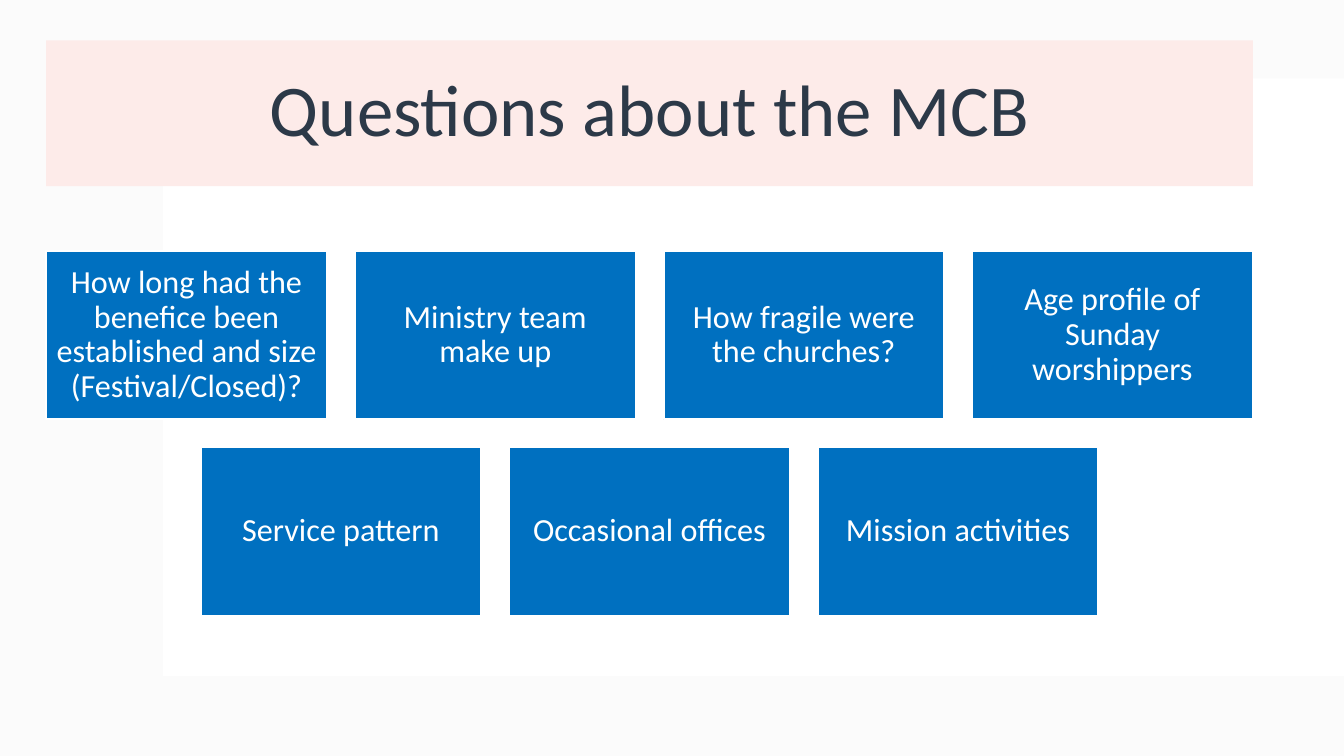
from lxml import etree
from pptx import Presentation
from pptx.dml.color import RGBColor
from pptx.enum import shapes, text
from pptx.oxml import ns
from pptx.util import Pt

WHITE = RGBColor(0xFF, 0xFF, 0xFF)
PALE_GREY = RGBColor(0xF4, 0xF4, 0xF4)
BLUSH = RGBColor(0xFD, 0xEB, 0xE9)
SLATE = RGBColor(0x2C, 0x39, 0x48)
BLUE = RGBColor(0x00, 0x70, 0xC0)

SLIDE_WIDTH, SLIDE_HEIGHT = 960, 540
QUESTION_ROWS = [
    ["How long had the benefice been established and size (Festival/Closed)?",
     "Ministry team make up",
     "How fragile were the churches?",
     "Age profile of Sunday worshippers"],
    ["Service pattern", "Occasional offices", "Mission activities"],
]


def add_panel(slide, box, colour):
    panel = slide.shapes.add_shape(shapes.MSO_SHAPE.RECTANGLE, *map(Pt, box))
    panel.shadow.inherit = False
    panel.fill.solid()
    panel.fill.fore_color.rgb = colour
    panel.line.fill.background()
    return panel


def write_label(panel, wording, size, colour, inset):
    frame = panel.text_frame
    frame.word_wrap = True
    frame.vertical_anchor = text.MSO_ANCHOR.MIDDLE
    frame.margin_left = frame.margin_right = Pt(inset)
    frame.margin_top = frame.margin_bottom = Pt(inset)
    label = frame.paragraphs[0]
    label.text = wording
    label.alignment = text.PP_ALIGN.CENTER
    label.line_spacing = 0.9
    label.font.name = "Calibri"
    label.font.size = Pt(size)
    label.font.color.rgb = colour


def add_backdrop(slide, box):
    left, top, width, height = box
    tint = add_panel(slide, box, PALE_GREY)
    colour = tint.fill._xPr.find(".//" + ns.qn("a:srgbClr"))
    etree.SubElement(colour, ns.qn("a:alpha"), val="35000")
    inset_left, inset_top = 116.5, 56
    add_panel(slide, (left + inset_left, top + inset_top,
                      width - inset_left, height - inset_top - 57), WHITE)


def add_title(slide, box):
    write_label(add_panel(slide, box, BLUSH),
                "Questions about the MCB", 52, SLATE, 3.6)


def add_questions(slide, box):
    left, top, width, height = box
    columns = max(map(len, QUESTION_ROWS))
    card_width = width / (columns + 0.1 * (columns - 1))
    card_height = 0.6 * card_width
    gap = 0.1 * card_width
    for row, questions in enumerate(QUESTION_ROWS):
        row_width = len(questions) * (card_width + gap) - gap
        row_left = left + (width - row_width) / 2
        for column, question in enumerate(questions):
            card = add_panel(slide, (row_left + column * (card_width + gap),
                                     top + row * (card_height + gap),
                                     card_width, card_height), BLUE)
            card.line.color.rgb = WHITE
            card.line.width = Pt(1.5)
            write_label(card, question, 23, WHITE, 6.9)


def main():
    deck = Presentation()
    deck.slide_width, deck.slide_height = Pt(SLIDE_WIDTH), Pt(SLIDE_HEIGHT)
    slide = deck.slides.add_slide(deck.slide_layouts[6])
    add_backdrop(slide, (0, 0, SLIDE_WIDTH, SLIDE_HEIGHT))
    add_title(slide, (33, 28.8, 862, 104.2))
    add_questions(slide, (33.2, 179.3, 861.7, 260.5))
    deck.save("out.pptx")


if __name__ == "__main__":
    main()
